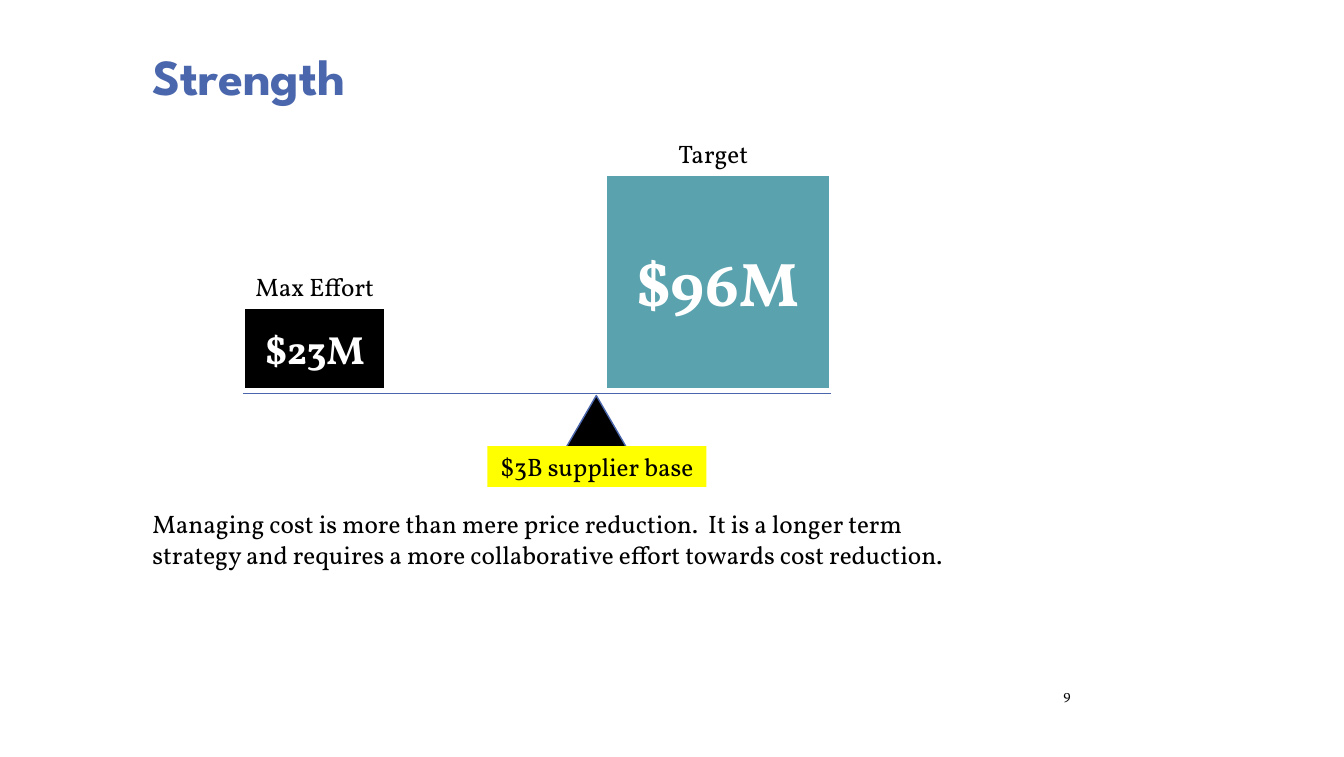
import pptx
import pptx.dml.color
import pptx.enum.shapes
import pptx.enum.text
import pptx.oxml.ns
import pptx.util
from lxml import etree

Pt = pptx.util.Pt
RGBColor = pptx.dml.color.RGBColor
Shape = pptx.enum.shapes.MSO_SHAPE
Align = pptx.enum.text.PP_ALIGN
Anchor = pptx.enum.text.MSO_ANCHOR

BLACK = RGBColor(0x00, 0x00, 0x00)
WHITE = RGBColor(0xFF, 0xFF, 0xFF)
BLUE = RGBColor(0x4A, 0x66, 0xAC)
TEAL = RGBColor(0x5A, 0xA2, 0xAE)
YELLOW = RGBColor(0xFF, 0xFF, 0x00)

MARGIN = 105.1  # left edge of title and message
BEAM_LEFT, BEAM_RIGHT, BEAM_Y = 173.5, 593.3, 280.8
BOX_BOTTOM = 278.6


class SlideBuilder:
    title_font = "League Spartan"
    body_font = "Vollkorn"
    inset = Pt(3.6)

    def __init__(self, slide):
        self.slide = slide

    def fill_text(self, shape, text, size, color=BLACK, bold=False, align=Align.CENTER,
                  anchor=Anchor.MIDDLE, wrap=True, font=None):
        frame = shape.text_frame
        frame.word_wrap = wrap
        frame.auto_size = pptx.enum.text.MSO_AUTO_SIZE.NONE
        frame.vertical_anchor = anchor
        frame.margin_left = frame.margin_right = self.inset
        frame.margin_top = frame.margin_bottom = self.inset
        paragraph = frame.paragraphs[0]
        paragraph.alignment = align
        run = paragraph.add_run()
        run.text = text
        run.font.name = font or self.body_font
        run.font.size = Pt(size)
        run.font.bold = bold
        run.font.color.rgb = color
        return paragraph

    def title(self, text, left, top, width, height):
        shape = self.slide.shapes.title
        shape.left, shape.top = Pt(left), Pt(top)
        shape.width, shape.height = Pt(width), Pt(height)
        paragraph = self.fill_text(shape, text, 36, BLUE, True, Align.LEFT,
                                   Anchor.BOTTOM, font=self.title_font)
        paragraph.line_spacing = 0.8

    def text(self, text, left, top, width, height, size=18, **style):
        shape = self.slide.shapes.add_textbox(Pt(left), Pt(top), Pt(width), Pt(height))
        self.fill_text(shape, text, size, **style)

    def shape(self, kind, left, top, width, height, fill, line=None, line_width=1):
        shape = self.slide.shapes.add_shape(kind, Pt(left), Pt(top), Pt(width), Pt(height))
        shape.shadow.inherit = False
        shape.fill.solid()
        shape.fill.fore_color.rgb = fill
        if line is None:
            shape.line.fill.background()
        else:
            shape.line.color.rgb = line
            shape.line.width = Pt(line_width)
        return shape

    def weight(self, label, amount, left, width, height, fill, size, label_center):
        """A box standing on the beam, with its label above."""
        top = BOX_BOTTOM - height
        box = self.shape(Shape.RECTANGLE, left, top, width, height, fill, WHITE, 3)
        self.fill_text(box, amount, size, WHITE, True)
        label_width = 94
        self.text(label, label_center - label_width / 2, top - 28.6,
                  label_width, 28.8, wrap=False)

    def line(self, left, right, y, color):
        connector = self.slide.shapes.add_connector(
            pptx.enum.shapes.MSO_CONNECTOR.STRAIGHT, Pt(left), Pt(y), Pt(right), Pt(y))
        connector.line.color.rgb = color
        connector.line.width = Pt(1)
        properties = connector._element.spPr
        etree.SubElement(properties, pptx.oxml.ns.qn("a:effectLst"))


def main():
    presentation = pptx.Presentation()
    presentation.slide_width, presentation.slide_height = Pt(959), Pt(540)
    slide = presentation.slides.add_slide(presentation.slide_layouts[5])
    builder = SlideBuilder(slide)

    # Title and message
    builder.title("Strength", MARGIN, 23, 547.2, 55.4)
    builder.text(
        "Managing cost is more than mere price reduction.  It is a longer term "
        "strategy and requires a more collaborative effort towards cost reduction.",
        MARGIN, 359.3, 588.2, 51.1, align=Align.LEFT, anchor=Anchor.TOP)

    # Weights on the beam
    builder.weight("Max Effort", "$23M", BEAM_LEFT, 102.2, 59.8, BLACK, 28, 224.6)
    builder.weight("Target", "$96M", BEAM_RIGHT - 162, 162, 154.8, TEAL, 44, 509)
    builder.line(BEAM_LEFT, BEAM_RIGHT, BEAM_Y, BLUE)

    # Fulcrum and its base
    builder.shape(Shape.ISOSCELES_TRIANGLE, 389.5, 282.2, 72, 61.9, BLACK, BLUE)
    base = builder.shape(Shape.RECTANGLE, 347.8, 318.2, 156.2, 29.1, YELLOW)
    builder.fill_text(base, "$3B supplier base", 18)

    # Slide number
    builder.text("9", 749.5, 486.7, 18, 18, size=10, align=Align.RIGHT, wrap=False)

    presentation.save("out.pptx")


if __name__ == "__main__":
    main()
